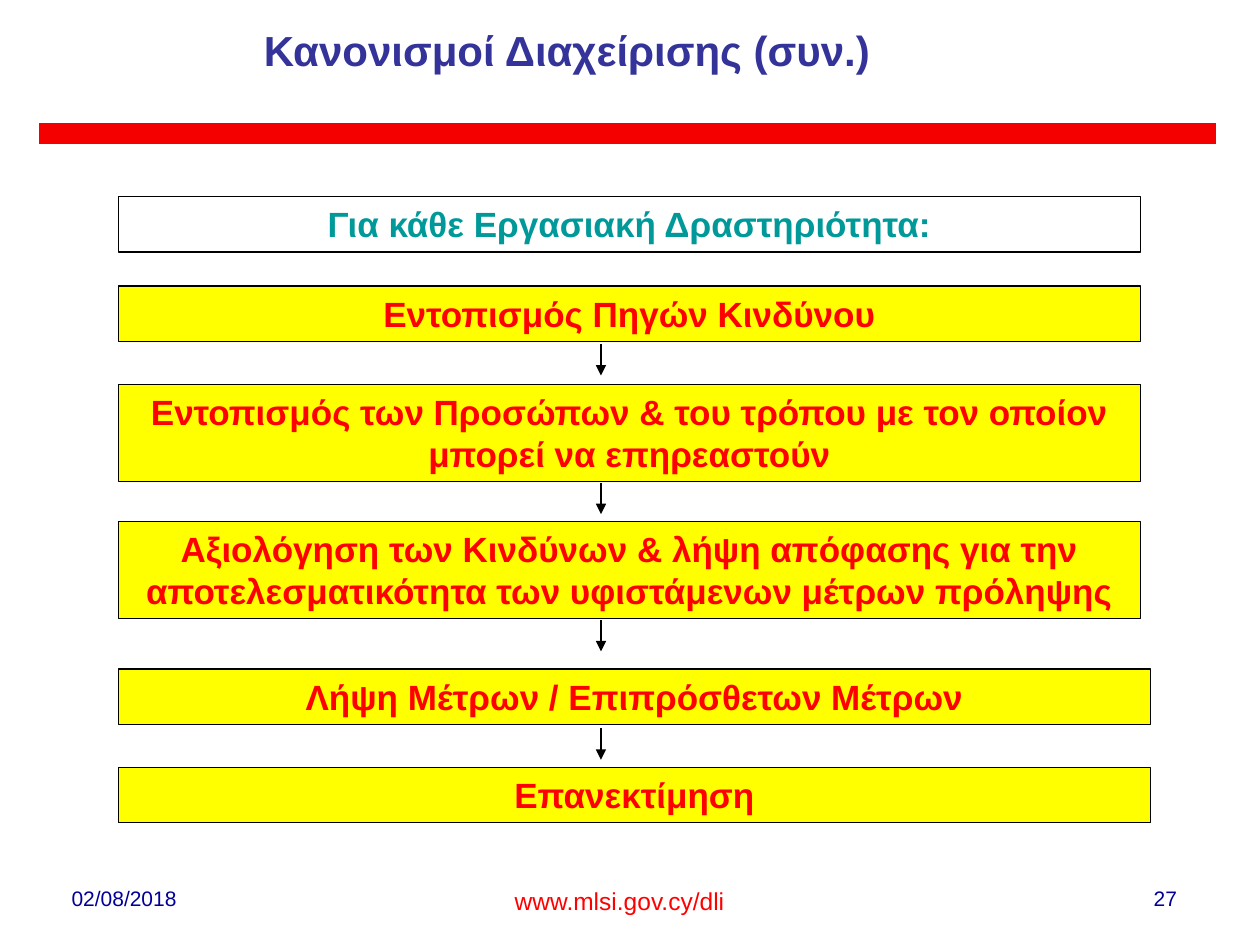
from lxml import etree
from pptx import Presentation
from pptx.dml.color import RGBColor
from pptx.enum import shapes, text
from pptx.oxml import ns
from pptx.util import Inches, Pt

HUES = {"rule": "F40000", "red": "FF0000", "yellow": "FFFF00", "teal": "009999",
        "title": "333399", "navy": "000099", "black": "000000"}
ALIGN = text.PP_ALIGN


def write(shape, words, size, hue, bold=False, align=ALIGN.CENTER,
          anchor=text.MSO_ANCHOR.TOP):
    frame = shape.text_frame
    frame.word_wrap = True
    frame.vertical_anchor = anchor
    para = frame.paragraphs[0]
    para.alignment = align
    run = para.add_run()
    run.text = words
    run.font.name = "Arial"
    run.font.size = Pt(size)
    run.font.bold = bold
    run.font.color.rgb = RGBColor.from_string(HUES[hue])


def draw_line(x1, y1, x2, y2, hue, width, arrow=False):
    line = slide.shapes.add_connector(shapes.MSO_CONNECTOR.STRAIGHT, Inches(x1),
                                      Inches(y1), Inches(x2), Inches(y2))
    line.line.color.rgb = RGBColor.from_string(HUES[hue])
    line.line.width = Pt(width)
    if arrow:
        etree.SubElement(line.line._get_or_add_ln(), ns.qn("a:tailEnd"), type="triangle")
    etree.SubElement(line._element.spPr, ns.qn("a:effectLst"))


deck = Presentation()
deck.slide_width, deck.slide_height = Inches(10), Inches(7.5)
slide = deck.slides.add_slide(deck.slide_layouts[5])

# Red rule under the title
for y in (1.02, 1.1):
    draw_line(0.31, y, 9.65, y, "rule", 6)

# Title
title = slide.shapes.title
title.left, title.top = Inches(0), Inches(0)
title.width, title.height = Inches(9), Inches(0.79)
write(title, "Κανονισμοί Διαχείρισης (συν.)", 24, "title", bold=True,
      anchor=text.MSO_ANCHOR.MIDDLE)

# Heading box and the steps below it: top, width, height, fill, text colour, words
boxes = [
    (1.56, 8.11, 0.44, None, "teal", "Για κάθε Εργασιακή Δραστηριότητα:"),
    (2.27, 8.11, 0.44, "yellow", "red", "Εντοπισμός Πηγών Κινδύνου"),
    (3.05, 8.11, 0.77, "yellow", "red",
     "Εντοπισμός των Προσώπων & του τρόπου με τον οποίον μπορεί να επηρεαστούν"),
    (4.14, 8.11, 0.77, "yellow", "red",
     "Αξιολόγηση των Κινδύνων & λήψη απόφασης για την αποτελεσματικότητα "
     "των υφιστάμενων μέτρων πρόληψης"),
    (5.31, 8.19, 0.44, "yellow", "red", "Λήψη Μέτρων / Επιπρόσθετων Μέτρων"),
    (6.09, 8.19, 0.44, "yellow", "red", "Επανεκτίμηση"),
]
for top, width, height, fill, hue, words in boxes:
    box = slide.shapes.add_shape(shapes.MSO_SHAPE.RECTANGLE, Inches(0.94), Inches(top),
                                 Inches(width), Inches(height))
    box.shadow.inherit = False
    if fill:
        box.fill.solid()
        box.fill.fore_color.rgb = RGBColor.from_string(HUES[fill])
    else:
        box.fill.background()
    box.line.color.rgb = RGBColor.from_string(HUES["black"])
    box.line.width = Pt(0.75)
    write(box, words, 20, hue, bold=True)

# Arrows between the steps
for y in (2.73, 3.83, 4.92, 5.78):
    draw_line(4.77, y, 4.77, y + 0.25, "black", 0.75, arrow=True)

# Date, address and page number
footer = [
    (0.47, 2.33, "02/08/2018", 12, "navy", ALIGN.LEFT),
    (3.36, 3.17, "www.mlsi.gov.cy/dli ", 14, "red", ALIGN.CENTER),
    (7.11, 2.33, "27", 12, "navy", ALIGN.RIGHT),
]
for left, width, words, size, hue, align in footer:
    note = slide.shapes.add_textbox(Inches(left), Inches(6.98), Inches(width), Inches(0.52))
    write(note, words, size, hue, align=align)

deck.save("out.pptx")
